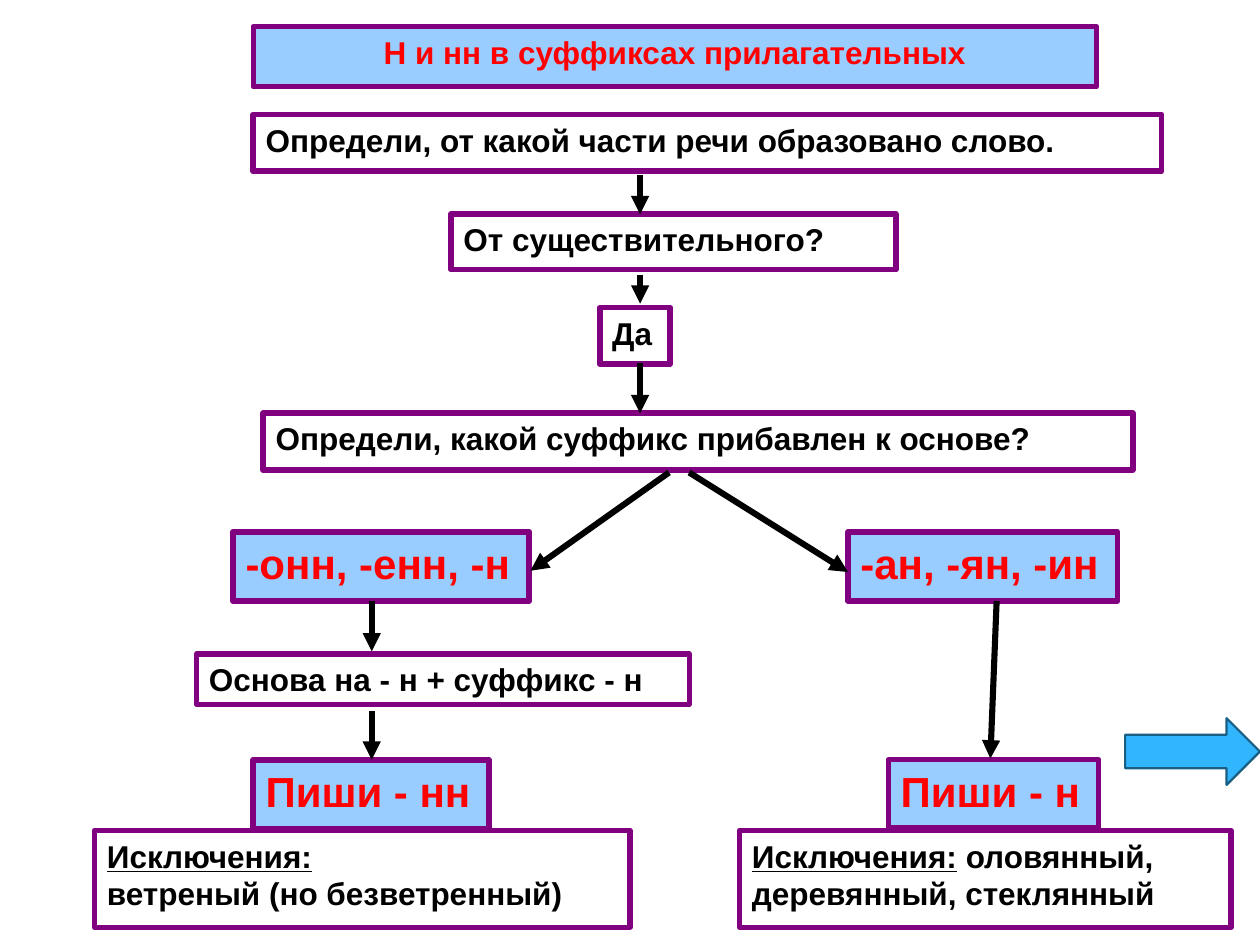
from dataclasses import dataclass

from lxml import etree
from pptx import Presentation
from pptx import util as u
from pptx.dml.color import RGBColor
from pptx.enum import shapes, text
from pptx.oxml import ns


@dataclass(frozen=True)
class Theme:
    font: str = "Arial"
    ink: str = "000000"
    red: str = "FF0000"
    edge: str = "800080"
    blue: str = "99CCFF"
    white: str = "FFFFFF"
    next: str = "31B6FD"
    rim: str = "195F84"
    body: int = 18
    big: int = 24
    link: float = 3.5


THEME = Theme()
MID = 5.08
LEFT = 2.95


def rgb(code):
    return RGBColor.from_string(code)


def add_shape(slide, kind, at, fill, edge, width):
    shape = slide.shapes.add_shape(kind, *map(u.Inches, at))
    shape.shadow.inherit = False
    shape.fill.solid()
    shape.fill.fore_color.rgb = rgb(fill)
    shape.line.color.rgb = rgb(edge)
    shape.line.width = u.Pt(width)
    return shape


def add_box(slide, at, words, width=3.25, fill=THEME.white, ink=THEME.ink,
            size=THEME.body, align=text.PP_ALIGN.LEFT, wrap=True):
    kind = shapes.MSO_SHAPE.RECTANGLE
    shape = add_shape(slide, kind, at, fill, THEME.edge, width)
    frame = shape.text_frame
    frame.word_wrap = wrap
    frame.vertical_anchor = text.MSO_ANCHOR.TOP
    frame.text = words
    for para in frame.paragraphs:
        para.alignment = align
        for run in para.runs:
            style(run, size, ink)
    return frame


def style(run, size, ink):
    run.font.name = THEME.font
    run.font.size = u.Pt(size)
    run.font.bold = True
    run.font.color.rgb = rgb(ink)


def add_key(slide, at, words, width=3.25):
    add_box(slide, at, words, width, THEME.blue, THEME.red, THEME.big,
            wrap=False)


def add_note(slide, at, first, second):
    label = "Исключения:"
    frame = add_box(slide, at, f"{label}\n{second}", 3)
    para = frame.paragraphs[0]
    para.runs[0].font.underline = True
    if first:
        run = para.add_run()
        run.text = f" {first}"
        style(run, THEME.body, THEME.ink)


def add_link(slide, start, end):
    kind = shapes.MSO_CONNECTOR.STRAIGHT
    link = slide.shapes.add_connector(kind, *map(u.Inches, start + end))
    link.line.color.rgb = rgb(THEME.ink)
    link.line.width = u.Pt(THEME.link)
    line = link.line._get_or_add_ln()
    etree.SubElement(line, ns.qn("a:tailEnd"), type="triangle")
    etree.SubElement(link._element.spPr, ns.qn("a:effectLst"))


def main():
    deck = Presentation()
    deck.slide_width = u.Inches(10)
    deck.slide_height = u.Inches(7.5)
    slide = deck.slides.add_slide(deck.slide_layouts[6])

    add_box(slide, (2.01, 0.21, 6.69, 0.48),
            "Н и нн в суффиксах прилагательных", 3,
            THEME.blue, THEME.red, align=text.PP_ALIGN.CENTER)

    add_box(slide, (2.01, 0.91, 7.21, 0.45),
            "Определи, от какой части речи образовано слово.")
    add_box(slide, (3.58, 1.7, 3.53, 0.44), "От существительного?")
    add_box(slide, (4.76, 2.44, 0.56, 0.45), "Да", wrap=False)
    add_box(slide, (2.09, 3.28, 6.9, 0.45),
            "Определи, какой суффикс прибавлен к основе?")

    add_key(slide, (1.85, 4.22, 2.35, 0.55), "-онн, -енн, -н", 3.5)
    add_box(slide, (1.56, 5.19, 3.91, 0.4), "Основа на - н + суффикс - н", 3)
    add_key(slide, (2.01, 6.03, 1.87, 0.55), "Пиши - нн")
    add_note(slide, (0.75, 6.59, 4.25, 0.77), "",
             "ветреный (но безветренный)")

    add_key(slide, (6.73, 4.22, 2.14, 0.55), "-ан, -ян, -ин")
    add_key(slide, (7.05, 6.03, 1.67, 0.54), "Пиши - н", 3)
    add_note(slide, (5.87, 6.59, 3.9, 0.77), "оловянный,",
             "деревянный, стеклянный")

    for x, top, end in (
        (MID, 1.39, 1.7),
        (MID, 2.18, 2.41),
        (MID, 2.88, 3.28),
        (LEFT, 4.77, 5.17),
        (LEFT, 5.64, 6.03),
    ):
        add_link(slide, (x, top), (x, end))
    add_link(slide, (5.31, 3.75), (4.21, 4.53))
    add_link(slide, (5.47, 3.75), (6.73, 4.54))
    add_link(slide, (7.91, 4.77), (7.86, 6.02))

    add_shape(slide, shapes.MSO_SHAPE.RIGHT_ARROW, (8.93, 5.7, 1.07, 0.53),
              THEME.next, THEME.rim, 1.25)
    deck.save("out.pptx")


if __name__ == "__main__":
    main()
